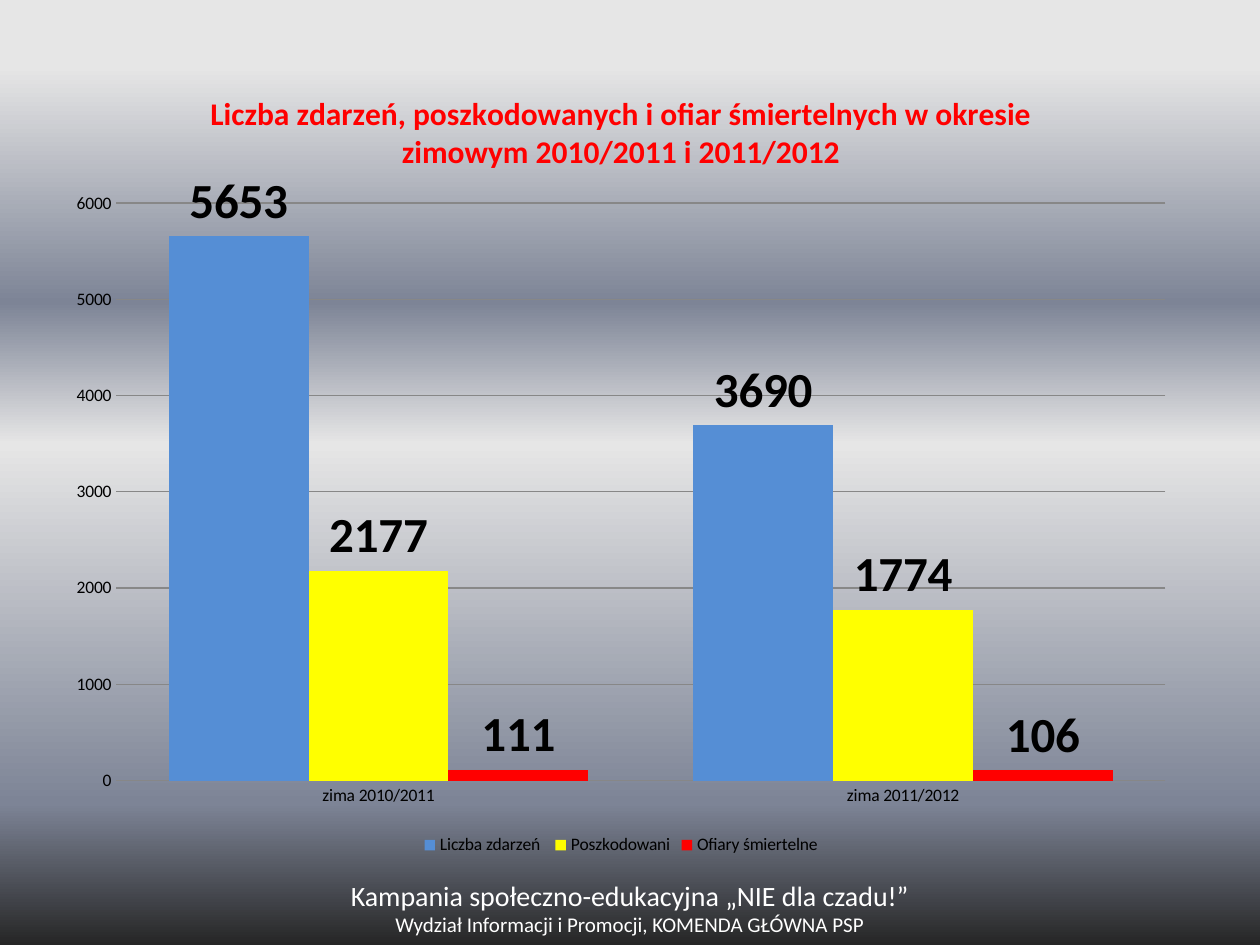
from dataclasses import dataclass

import pptx
import pptx.chart.data
import pptx.dml.color
import pptx.enum.chart
import pptx.enum.text
import pptx.oxml
import pptx.oxml.ns
import pptx.util

PX = 914400 / 126
FONT = "Calibri"
COLOURS = {
    "light": "E6E6E6",
    "slate": "7D8496",
    "dark": "262626",
    "grid": "878787",
    "blue": "558ED5",
    "yellow": "FFFF00",
    "red": "FF0000",
    "black": "000000",
    "white": "FFFFFF",
}
BACKGROUND_STOPS = [(0, "light"), (7, "light"), (32, "slate"), (47, "light"),
                    (85, "slate"), (100, "dark")]
SEASONS = ["zima 2010/2011", "zima 2011/2012"]
TITLE = ("Liczba zdarzeń, poszkodowanych i ofiar śmiertelnych w okresie\n"
         "zimowym 2010/2011 i 2011/2012")


@dataclass
class Measure:
    name: str
    values: tuple[int, int]
    colour: str


@dataclass
class FooterLine:
    text: str
    size: int


MEASURES = [
    Measure("Liczba zdarzeń ", (5653, 3690), "blue"),
    Measure("Poszkodowani", (2177, 1774), "yellow"),
    Measure("Ofiary śmiertelne", (111, 106), "red"),
]
FOOTER = [
    FooterLine("Kampania społeczno-edukacyjna „NIE dla czadu!”", 16),
    FooterLine("Wydział Informacji i Promocji, KOMENDA GŁÓWNA PSP", 12),
]


def px(length: int) -> int:
    return round(length * PX)


def colour(name: str) -> pptx.dml.color.RGBColor:
    return pptx.dml.color.RGBColor.from_string(COLOURS[name])


def style_font(font, size: int, name: str, bold: bool = False) -> None:
    font.name = FONT
    font.size = pptx.util.Pt(size)
    font.bold = bold
    font.color.rgb = colour(name)


def paint_background(page) -> None:
    """Fill the page with a vertical gradient of several stops."""
    fill = page.background.fill
    fill.gradient()
    fill.gradient_angle = 270
    stop_list = page.background._cSld.find(".//" + pptx.oxml.ns.qn("a:gsLst"))
    for stop in list(stop_list):
        stop_list.remove(stop)
    for percent, name in BACKGROUND_STOPS:
        stop_list.append(pptx.oxml.parse_xml(
            f'<a:gs {pptx.oxml.ns.nsdecls("a")} pos="{percent * 1000}">'
            f'<a:srgbClr val="{COLOURS[name]}"/></a:gs>'))


def add_footer(page) -> None:
    box = page.shapes.add_textbox(px(253), px(895), px(754), px(50))
    frame = box.text_frame
    frame.word_wrap = True
    frame.vertical_anchor = pptx.enum.text.MSO_ANCHOR.MIDDLE
    frame.margin_top = 0
    frame.margin_bottom = px(25)
    frame.text = "\n".join(line.text for line in FOOTER)
    for para, line in zip(frame.paragraphs, FOOTER):
        para.alignment = pptx.enum.text.PP_ALIGN.CENTER
        style_font(para.font, line.size, "white")


def add_season_chart(page) -> None:
    data = pptx.chart.data.CategoryChartData()
    data.categories = SEASONS
    for measure in MEASURES:
        data.add_series(measure.name, measure.values)
    chart = page.shapes.add_chart(
        pptx.enum.chart.XL_CHART_TYPE.COLUMN_CLUSTERED,
        px(54), px(66), px(1134), px(794), data).chart
    style_font(chart.font, 10, "black")

    chart.has_title = True
    chart.chart_title.include_in_layout = False
    title = chart.chart_title.text_frame
    title.text = TITLE
    for para in title.paragraphs:
        style_font(para.font, 18, "red", bold=True)

    chart.has_legend = True
    chart.legend.position = pptx.enum.chart.XL_LEGEND_POSITION.BOTTOM
    chart.legend.include_in_layout = False

    for axis in (chart.category_axis, chart.value_axis):
        axis.major_tick_mark = pptx.enum.chart.XL_TICK_MARK.NONE
    chart.category_axis.format.line.color.rgb = colour("grid")
    chart.value_axis.format.line.fill.background()
    chart.value_axis.minimum_scale = 0
    chart.value_axis.maximum_scale = 6000
    chart.value_axis.major_unit = 1000
    chart.value_axis.major_gridlines.format.line.color.rgb = colour("grid")

    plot = chart.plots[0]
    plot.gap_width = 75
    plot.overlap = 0
    plot.vary_by_categories = False
    for series, measure in zip(plot.series, MEASURES):
        series.format.fill.solid()
        series.format.fill.fore_color.rgb = colour(measure.colour)
        labels = series.data_labels
        labels.show_value = True
        labels.position = pptx.enum.chart.XL_LABEL_POSITION.OUTSIDE_END
        style_font(labels.font, 28, "black", bold=True)


def main() -> None:
    deck = pptx.Presentation()
    deck.slide_width = px(1260)
    deck.slide_height = px(945)
    page = deck.slides.add_slide(deck.slide_layouts[6])
    paint_background(page)
    add_footer(page)
    add_season_chart(page)
    deck.save("out.pptx")


if __name__ == "__main__":
    main()
